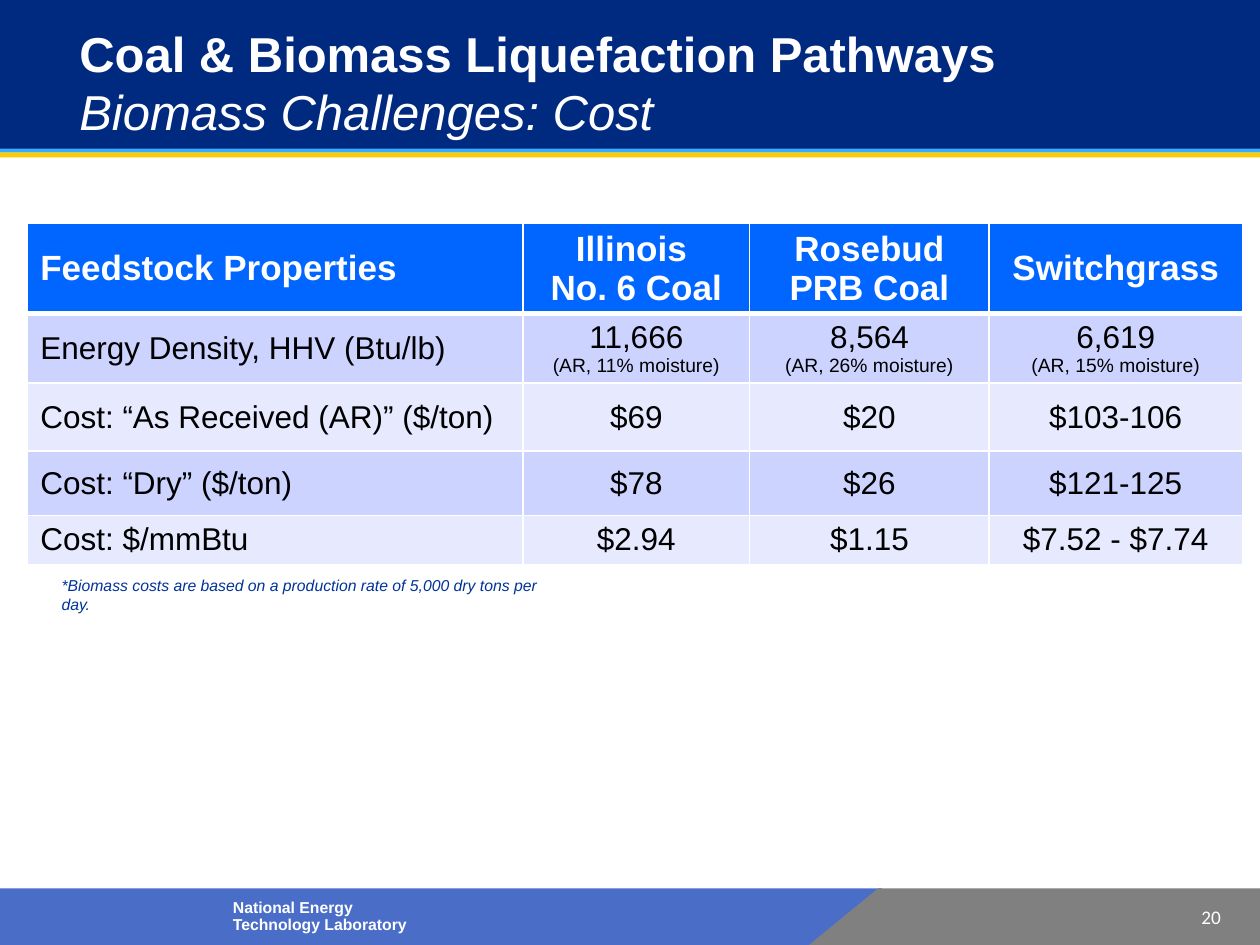
from lxml.etree import SubElement
from pptx import Presentation
from pptx.dml.color import RGBColor as Rgb
from pptx.enum.shapes import MSO_SHAPE as Kind
from pptx.enum.text import MSO_ANCHOR as Anchor, MSO_AUTO_SIZE as Fit, PP_ALIGN as Align
from pptx.oxml.ns import qn
from pptx.util import Inches, Pt

HUES = {
    "navy": "002A7F", "sky": "37ABFF", "gold": "FECB00", "foot": "4A6EC8",
    "gray": "808080", "head": "0066FF", "odd": "CCD3FF", "even": "E7EAFF",
    "white": "FFFFFF", "black": "000000", "note": "003399",
}


def style(font, size, hue, bold=False, italic=False, name="Arial"):
    font.name, font.size = name, Pt(size)
    font.bold, font.italic = bold, italic
    font.color.rgb = Rgb.from_string(HUES[hue])


def edge(cell, side, width):
    line = SubElement(cell._tc.get_or_add_tcPr(), qn("a:" + side), w=str(Pt(width)))
    fill = SubElement(line, qn("a:solidFill"))
    SubElement(fill, qn("a:srgbClr"), val=HUES["white"])


deck = Presentation()
deck.slide_width, deck.slide_height = Inches(10), Inches(7.5)
slide = deck.slides.add_slide(deck.slide_layouts[5])
shapes = slide.shapes

# Footer and header bands
bands = [
    (Kind.RECTANGLE, 0, 7.05, 7, 0.45, "foot"),
    (Kind.RECTANGLE, 6.97, 7.05, 3.03, 0.45, "gray"),
    (Kind.ISOSCELES_TRIANGLE, 6.42, 7.05, 0.55, 0.45, "gray"),
    (Kind.RECTANGLE, 0, 1.21, 10, 0.04, "gold"),
    (Kind.RECTANGLE, 0, 1.13, 10, 0.08, "sky"),
    (Kind.RECTANGLE, 0, 0, 10, 1.18, "navy"),
]
for kind, x, y, w, h, hue in bands:
    band = shapes.add_shape(kind, Inches(x), Inches(y), Inches(w), Inches(h))
    band.shadow.inherit = False
    band.fill.solid()
    band.fill.fore_color.rgb = Rgb.from_string(HUES[hue])
    band.line.fill.background()
    if kind == Kind.ISOSCELES_TRIANGLE:
        band.adjustments[0] = 1

# Title, raised above the bands
title = shapes.title
title.element.getparent().append(title.element)
title.left, title.top = Inches(0.63), Inches(0.13)
title.width, title.height = Inches(7.9), Inches(1.04)
frame = title.text_frame
frame.auto_size, frame.word_wrap = Fit.NONE, True
frame.vertical_anchor = Anchor.MIDDLE
frame.margin_left = frame.margin_right = 0
para = frame.paragraphs[0]
para.alignment = Align.LEFT
run = para.add_run()
run.text = "Coal & Biomass Liquefaction Pathways"
style(run.font, 28, "white", bold=True)
para.add_line_break()
run = para.add_run()
run.text = "Biomass Challenges: Cost"
style(run.font, 28, "white", italic=True)

# Feedstock table
rows = [
    ["Feedstock Properties", "Illinois \nNo. 6 Coal", "Rosebud PRB Coal", "Switchgrass"],
    ["Energy Density, HHV (Btu/lb)", "11,666\v(AR, 11% moisture)",
     "8,564\v(AR, 26% moisture)", "6,619\v(AR, 15% moisture)"],
    ["Cost: “As Received (AR)” ($/ton)", "$69", "$20", "$103-106"],
    ["Cost: “Dry” ($/ton)", "$78", "$26", "$121-125"],
    ["Cost: $/mmBtu", "$2.94", "$1.15", "$7.52 - $7.74"],
]
wide = [3.93, 1.8, 1.9, 2.01]
high = [0.71, 0.55, 0.54, 0.51, 0.39]
table = shapes.add_table(len(rows), len(wide), Inches(0.22), Inches(1.77),
                         Inches(sum(wide)), Inches(sum(high))).table
for col, w in zip(table.columns, wide):
    col.width = Inches(w)
for row, h in zip(table.rows, high):
    row.height = Inches(h)
for r, row in enumerate(rows):
    for c, text in enumerate(row):
        cell = table.cell(r, c)
        cell.text = text
        cell.vertical_anchor = Anchor.MIDDLE
        for side in ("lnL", "lnR", "lnT", "lnB"):
            rule = (r, side) in ((0, "lnB"), (1, "lnT"))
            edge(cell, side, 3 if rule else 1)
        cell.fill.solid()
        hue = "head" if r == 0 else "odd" if r % 2 else "even"
        cell.fill.fore_color.rgb = Rgb.from_string(HUES[hue])
        for para in cell.text_frame.paragraphs:
            para.alignment = Align.CENTER if c else Align.LEFT
            if r == 0:
                style(para.font, 20, "white", bold=True)
            else:
                style(para.font, 18, "black")
            for run in para.runs[1:]:
                run.font.size = Pt(11)

# Footnote, laboratory name and page number
notes = [
    ("*Biomass costs are based on a production rate of 5,000 dry tons per day.",
     0.39, 4.52, 4.23, 0.25, Anchor.TOP, (9, "note", False, True)),
    ("National Energy Technology Laboratory",
     1.75, 7.09, 1.78, 0.37, Anchor.MIDDLE, (9, "white", True)),
    ("20", 9.24, 7.18, 0.45, 0.19, Anchor.MIDDLE,
     (11, "white", False, False, "Calibri")),
]
for text, x, y, w, h, anchor, look in notes:
    frame = shapes.add_textbox(Inches(x), Inches(y), Inches(w), Inches(h)).text_frame
    frame.word_wrap, frame.vertical_anchor = True, anchor
    frame.text = text
    para = frame.paragraphs[0]
    style(para.font, *look)
    if text.startswith("National"):
        para.line_spacing = 0.9
    if text == "20":
        para.alignment = Align.RIGHT
        frame.margin_left = frame.margin_right = 0
        frame.margin_top = frame.margin_bottom = 0

deck.save("out.pptx")
